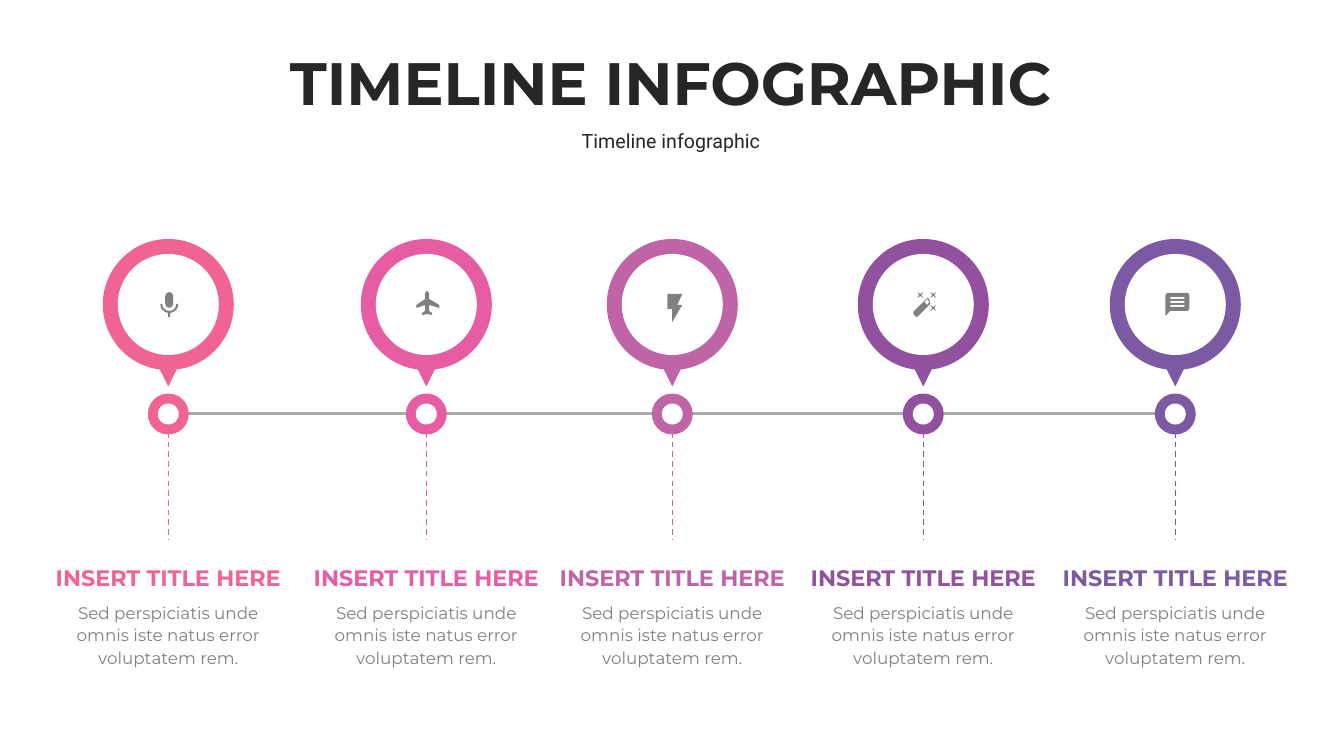
"""Build a five-step timeline infographic slide."""
from lxml.etree import SubElement
from pptx import Presentation
from pptx.dml.color import RGBColor
from pptx.enum.dml import MSO_LINE_DASH_STYLE as Dash
from pptx.enum.shapes import MSO_CONNECTOR as Connector, MSO_SHAPE as Shape
from pptx.enum.text import MSO_ANCHOR as Anchor, MSO_AUTO_SIZE as AutoSize, PP_ALIGN as Align
from pptx.oxml.ns import qn
from pptx.util import Emu, Pt

PX = 914400 / 100.8
NUDGE = 0.3
COLORS = {
    "ink": "262626", "grey": "808080", "axis": "A6AAA9", "white": "FFFFFF",
    "coral": "F06495", "pink": "E65DA3", "orchid": "BF64A7",
    "purple": "91519F", "violet": "7B59A3",
}


def px(length):
    return Emu(round(length * PX))


def bar(left, top, right, bottom):
    return [(left, top), (right, top), (right, bottom), (left, bottom)]


def sparkle(x, y):
    star = [(-3, -3), (0, -1), (3, -3), (1, 0), (3, 3), (0, 1), (-3, 3), (-1, 0)]
    return [(x + dx, y + dy) for dx, dy in star]


PIN = [[
    (0, -65.5), (-36, -65.5, -65.5, -36, -65.5, 0), (-65.5, 33, -41, 61, -8.5, 65),
    (0, 82), (8.5, 65), (41, 61, 65.5, 33, 65.5, 0), (65.5, -36, 36, -65.5, 0, -65.5),
]]
MICROPHONE = [
    [(1, 3), (3, 3, 5, 1, 5, -1), (5, -9), (5, -11, 3, -13, 1, -13),
     (-1, -13, -3, -11, -3, -9), (-3, -1), (-3, 1, -1, 3, 1, 3)],
    [(8, -1), (8, 3, 5, 6, 1, 6), (-3, 6, -6, 3, -6, -1), (-8, -1),
     (-8, 4, -5, 7, 0, 8), (0, 12), (2, 12), (2, 8), (7, 7, 10, 4, 10, -1)],
]
PLANE = [[
    (13, 3), (13, 0), (3, -6), (3, -12), (3, -13, 2, -14, 1, -14),
    (0, -14, -1, -13, -1, -12), (-1, -6), (-10, 0), (-10, 3), (-1, 0), (-1, 6),
    (-4, 8), (-4, 10), (1, 9), (6, 10), (6, 8), (3, 6), (3, 0),
]]
BOLT = [[(-5, -11), (-5, 4), (0, 4), (0, 17), (10, 0), (5, 0), (10, -11)]]
WAND = [
    sparkle(-3, -10), sparkle(10, -10), sparkle(10, 3),
    [(4, -7), (-10, 7), (-10, 9), (-7, 12), (-6, 12), (7, -1), (7, -3), (5, -7)],
    [(4, -6), (6, -3), (4, 0), (1, -3)],
]
CHAT = [
    [(12, -12), (-7, -12), (-9, -12, -10, -11, -10, -9), (-10, 11), (-5, 6), (12, 6),
     (13, 6, 14, 5, 14, 4), (14, -10), (14, -11, 13, -12, 12, -12)],
    *(bar(-5, top, 9, top + 2) for top in (-8, -4, 0)),
]
STEPS = [
    (168, "coral", MICROPHONE), (426, "pink", PLANE), (672, "orchid", BOLT),
    (923, "purple", WAND), (1175, "violet", CHAT),
]


class TimelineSlide:
    """Draw styled elements on one slide, measured in px."""

    def __init__(self, slide):
        self.shapes = slide.shapes

    def color(self, name):
        return RGBColor.from_string(COLORS[name])

    def paint(self, shape, color):
        shape.shadow.inherit = False
        shape.fill.solid()
        shape.fill.fore_color.rgb = self.color(color)
        shape.line.fill.background()

    def disc(self, x, y, diameter, color):
        corner = px(x - diameter / 2), px(y - diameter / 2)
        self.paint(self.shapes.add_shape(Shape.OVAL, *corner, px(diameter), px(diameter)), color)

    def outline(self, x, y, contours, color):
        builder = None
        for (start_x, start_y), *segments in contours:
            start = px(x + start_x), px(y + start_y)
            if builder:
                builder.move_to(*start)
            else:
                builder = self.shapes.build_freeform(*start)
            builder.add_line_segments([
                (px(x + dx), px(y + dy))
                for segment in segments for dx, dy in zip(segment[::2], segment[1::2])
            ])
        shape = builder.convert_to_shape()
        self.bend(shape, [segment for contour in contours for segment in contour[1:]])
        self.paint(shape, color)

    def bend(self, shape, segments):
        edges = iter(list(shape._element.iter(qn("a:lnTo"))))
        for segment in segments:
            group = [next(edges) for _ in segment[::2]]
            if len(group) == 3:
                curve = group[0].makeelement(qn("a:cubicBezTo"))
                group[0].addprevious(curve)
                for edge in group:
                    curve.append(edge[0])
                    edge.getparent().remove(edge)

    def line(self, start, end, color, width, dash=None):
        rule = self.shapes.add_connector(Connector.STRAIGHT, *map(px, start + end))
        rule.line.color.rgb = self.color(color)
        rule.line.width = Pt(width)
        if dash:
            rule.line.dash_style = dash
        SubElement(rule._element.spPr, qn("a:effectLst"))

    def text(self, box, wording, size, color, font="Montserrat", bold=False,
             wrap=True, spacing=1.0, before=0, heading=False):
        frame = self.shapes.add_textbox(*map(px, box)).text_frame
        frame.word_wrap = wrap
        if heading:
            frame.vertical_anchor = Anchor.MIDDLE
            frame.margin_left = frame.margin_right = 0
            frame.margin_top = frame.margin_bottom = 0
        else:
            frame.auto_size = AutoSize.SHAPE_TO_FIT_TEXT
        paragraph = frame.paragraphs[0]
        paragraph.text = wording
        paragraph.alignment = Align.CENTER
        paragraph.line_spacing = spacing
        paragraph.space_before = Pt(before)
        paragraph.font.name = font
        paragraph.font.size = Pt(size)
        paragraph.font.bold = bold
        paragraph.font.color.rgb = self.color(color)

    def step(self, x, color, icon):
        self.outline(x, 304.5, PIN, color)
        self.disc(x, 304.5, 101, "white")
        self.disc(x, 414, 41, color)
        self.disc(x, 414, 21, "white")
        self.outline(x, 305, icon, "grey")
        self.line((x, 432), (x, 540), color, 1, Dash.DASH)
        self.text((x - 124, 559, 248, 37), "INSERT TITLE HERE", 16, color, bold=True, wrap=False)
        self.text((x - 123, 596, 246, 78),
                  "Sed perspiciatis unde omnis iste natus error voluptatem rem.",
                  12, "grey", spacing=1.1)


def main():
    deck = Presentation()
    deck.slide_width, deck.slide_height = px(1344), px(756)
    timeline = TimelineSlide(deck.slides.add_slide(deck.slide_layouts[6]))
    timeline.line((164, 413 + NUDGE), (1184, 413 + NUDGE), "axis", 2)
    for x, color, icon in STEPS:
        timeline.step(x + NUDGE, color, icon)
    timeline.text((56, 130, 1230, 25), "Timeline infographic", 14, "ink", font="Roboto",
                  wrap=False, spacing=0.9, before=10, heading=True)
    timeline.text((56, 50, 1230, 73), "TIMELINE INFOGRAPHIC", 42.7, "ink", bold=True,
                  spacing=0.9, heading=True)
    deck.save("out.pptx")


if __name__ == "__main__":
    main()
